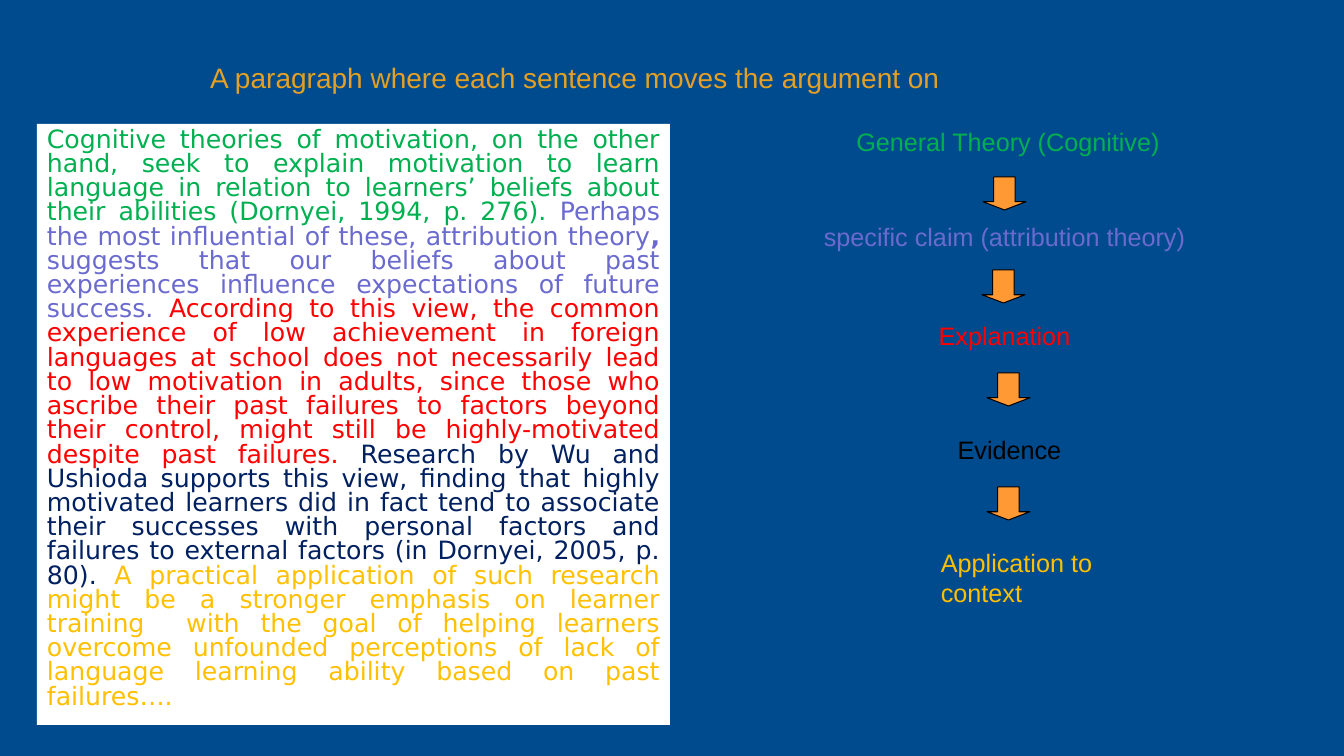
"""Build a slide that maps a sample paragraph to the steps of its argument."""
import pptx
import pptx.util
import pptx.dml.color
import pptx.enum.shapes
import pptx.enum.text

PX = 914400 / 100.8
SIZE = (1344, 756)
HUES = {
    "back": "004B8D", "panel": "FFFFFF", "title": "E4A025",
    "arrow": "FF9933", "edge": "000000", "theory": "00B050",
    "claim": "6B6BCF", "reason": "FF0000", "study": "002060",
    "proof": "000000", "use": "FFC000",
}
TITLE = "A paragraph where each sentence moves the argument on"
TITLE_BOX = (200, 55, 952, 45)
ESSAY_BOX = (37, 124, 633, 601)
ESSAY = [
    ("Cognitive theories of motivation, on the other hand, seek to explain "
     "motivation to learn language in relation to learners’ beliefs about "
     "their abilities (Dornyei, 1994, p. 276). ", "theory", False),
    ("Perhaps the most influential of these, attribution theory", "claim", False),
    (",", "claim", True),
    (" suggests that our beliefs about past experiences influence "
     "expectations of future success. ", "claim", False),
    ("According to this view, the common experience of low achievement in "
     "foreign languages at school does not necessarily lead to low motivation "
     "in adults, since those who ascribe their past failures to factors beyond "
     "their control, might still be highly-motivated despite past failures. ",
     "reason", False),
    ("Research by Wu and Ushioda supports this view, finding that highly "
     "motivated learners did in fact tend to associate their successes with "
     "personal factors and failures to external factors (in Dornyei, 2005, "
     "p. 80). ", "study", False),
    ("A practical application of such research might be a stronger emphasis on "
     "learner training  with the goal of helping learners overcome unfounded "
     "perceptions of lack of language learning ability based on past "
     "failures….", "use", False),
]
STEPS = [
    ("General Theory (Cognitive)", "theory", (845, 121, 326, 40), False),
    ("specific claim (attribution theory)", "claim", (804, 216, 401, 40), False),
    ("Explanation", "reason", (928, 315, 153, 40), False),
    ("Evidence", "proof", (947, 429, 125, 40), False),
    ("Application to context", "use", (931, 542, 199, 72), True),
]
ARROWS = [(983, 177), (982, 270), (987, 373), (987, 487)]
ARROW_SIZE = (43, 33)
ALIGN = pptx.enum.text.PP_ALIGN


def emu(box):
    return [round(n * PX) for n in box]


def put(item, values):
    for name, value in values.items():
        setattr(item, name, value)


def color(name):
    return pptx.dml.color.RGBColor.from_string(HUES[name])


def paint(fill, name):
    fill.solid()
    fill.fore_color.rgb = color(name)


def write(shape, runs, font, size, wrap=True, **form):
    frame = shape.text_frame
    put(frame, {"auto_size": pptx.enum.text.MSO_AUTO_SIZE.NONE,
                "vertical_anchor": pptx.enum.text.MSO_ANCHOR.TOP,
                "word_wrap": wrap})
    para = frame.paragraphs[0]
    put(para, form)
    for text, hue, bold in runs:
        run = para.add_run()
        run.text = text
        put(run.font, {"name": font, "size": pptx.util.Pt(size), "bold": bold})
        run.font.color.rgb = color(hue)


def main():
    deck = pptx.Presentation()
    deck.slide_width, deck.slide_height = emu(SIZE)
    slide = deck.slides.add_slide(deck.slide_layouts[5])
    paint(slide.background.fill, "back")
    shapes = slide.shapes

    title = shapes.title
    put(title, dict(zip(("left", "top", "width", "height"), emu(TITLE_BOX))))
    write(title, [(TITLE, "title", False)], "Arial", 20, alignment=ALIGN.LEFT)

    essay = shapes.add_textbox(*emu(ESSAY_BOX))
    paint(essay.fill, "panel")
    write(essay, ESSAY, "DejaVu Sans", 18, alignment=ALIGN.JUSTIFY,
          line_spacing=0.8)

    for text, hue, box, wrap in STEPS:
        label = shapes.add_textbox(*emu(box))
        side = ALIGN.LEFT if wrap else ALIGN.CENTER
        write(label, [(text, hue, False)], "Arial", 18, wrap, alignment=side)

    for spot in ARROWS:
        arrow = shapes.add_shape(pptx.enum.shapes.MSO_SHAPE.DOWN_ARROW,
                                 *emu(spot + ARROW_SIZE))
        arrow.shadow.inherit = False
        arrow.adjustments[0] = 0.5
        arrow.adjustments[1] = 0.25
        paint(arrow.fill, "arrow")
        paint(arrow.line.fill, "edge")
        arrow.line.width = pptx.util.Pt(0.75)

    deck.save("out.pptx")


if __name__ == "__main__":
    main()
